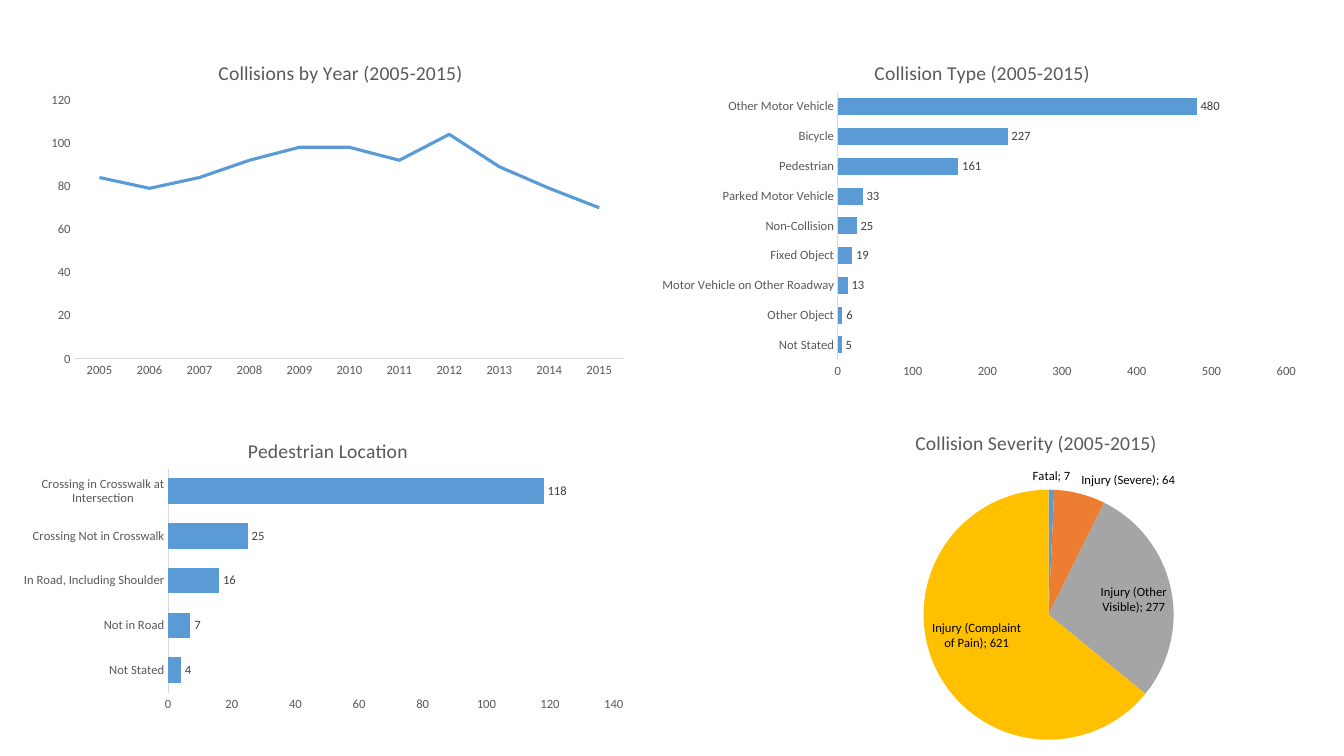
import pptx
import pptx.chart.data
import pptx.dml.color
import pptx.enum.chart
import pptx.oxml
import pptx.oxml.ns
import pptx.util

Inches = pptx.util.Inches
Kind = pptx.enum.chart.XL_CHART_TYPE
Spot = pptx.enum.chart.XL_LABEL_POSITION
HUES = {"blue": "5B9BD5", "orange": "ED7D31", "grey": "A5A5A5", "gold": "FFC000",
        "text": "595959", "label": "404040", "rule": "D9D9D9", "black": "000000"}


class Board:
    """Draws styled charts on one slide; boxes are left, top, width, height in inches."""

    def __init__(self, slide):
        self.slide = slide
        self.face = "Calibri"

    def hue(self, name):
        return pptx.dml.color.RGBColor.from_string(HUES[name])

    def font(self, font, size, name):
        font.size = pptx.util.Pt(size)
        font.name = self.face
        font.bold = False
        font.color.rgb = self.hue(name)

    def paint(self, fill, name):
        fill.solid()
        fill.fore_color.rgb = self.hue(name)

    def place(self, node, index, parts):
        for old in node.findall(pptx.oxml.ns.qn("c:layout")):
            node.remove(old)
        tags = "".join(f'<c:{tag} val="{val}"/>' for tag, val in parts)
        node.insert(index, pptx.oxml.parse_xml(
            f'<c:layout {pptx.oxml.ns.nsdecls("c")}><c:manualLayout>{tags}'
            '</c:manualLayout></c:layout>'))

    def chart(self, kind, box, title, spot, plot, rows):
        data = pptx.chart.data.CategoryChartData()
        data.categories = [name for name, _ in rows]
        data.add_series("Series 1", [val for _, val in rows])
        frame = self.slide.shapes.add_chart(kind, *map(Inches, box), data)
        chart = frame.chart
        self.font(chart.font, 10, "black")
        chart.has_legend = False
        chart.has_title = True
        head = chart.chart_title
        head.include_in_layout = False
        head.text_frame.text = title
        self.font(head.text_frame.paragraphs[0].font, 14, "text")

        left, top, wide, high = box
        x, y = spot
        edges = [("xMode", "edge"), ("yMode", "edge")]
        self.place(head.text_frame._txBody.getparent().getparent(), 1, edges + [
            ("x", round((x - left) / wide, 3)), ("y", round((y - top) / high, 3))])
        x, y, w, h = plot
        self.place(chart.element.chart.plotArea, 0, [("layoutTarget", "inner")] + edges + [
            ("x", round((x - left) / wide, 3)), ("y", round((y - top) / high, 3)),
            ("w", round(w / wide, 3)), ("h", round(h / high, 3))])
        chart.plots[0].vary_by_categories = kind == Kind.PIE
        return chart

    def axes(self, chart, top, step):
        for axis in (chart.category_axis, chart.value_axis):
            axis.has_major_gridlines = False
            axis.major_tick_mark = axis.minor_tick_mark = pptx.enum.chart.XL_TICK_MARK.NONE
            self.font(axis.tick_labels.font, 9, "text")
        line = chart.category_axis.format.line
        line.color.rgb = self.hue("rule")
        line.width = pptx.util.Pt(0.75)
        axis = chart.value_axis
        axis.format.line.fill.background()
        axis.minimum_scale, axis.maximum_scale, axis.major_unit = 0, top, step

    def labels(self, chart, name, spot):
        series = chart.plots[0].series[0]
        tags = series.data_labels
        tags.show_value = True
        tags.position = spot
        self.font(tags.font, 9, name)
        return tags

    def bars(self, top, step, **look):
        chart = self.chart(Kind.BAR_CLUSTERED, **look)
        self.axes(chart, top, step)
        chart.plots[0].gap_width = 75
        self.paint(chart.plots[0].series[0].format.fill, "blue")
        self.labels(chart, "label", Spot.OUTSIDE_END)

    def line(self, top, step, **look):
        chart = self.chart(Kind.LINE, **look)
        self.axes(chart, top, step)
        series = chart.plots[0].series[0]
        series.smooth = False
        series.format.line.color.rgb = self.hue("blue")
        series.format.line.width = pptx.util.Pt(2.25)
        series.marker.style = pptx.enum.chart.XL_MARKER_STYLE.NONE

    def pie(self, names, **look):
        chart = self.chart(Kind.PIE, **look)
        series = chart.plots[0].series[0]
        for index, name in enumerate(names):
            self.paint(series.points[index].format.fill, name)
        tags = self.labels(chart, "black", Spot.BEST_FIT)
        tags.show_category_name = True
        tags.number_format = "#,##0"
        tags.number_format_is_linked = False
        mark = pptx.oxml.parse_xml(
            f'<c:separator {pptx.oxml.ns.nsdecls("c")}>; </c:separator>')
        tags._element.find(pptx.oxml.ns.qn("c:showBubbleSize")).addnext(mark)


def main():
    deck = pptx.Presentation()
    deck.slide_width, deck.slide_height = Inches(13.33), Inches(7.5)
    board = Board(deck.slides.add_slide(deck.slide_layouts[6]))

    board.bars(
        600, 100, box=(6.44, 0.38, 6.54, 3.45), title="Collision Type (2005-2015)",
        spot=(8.64, 0.55), plot=(8.31, 0.91, 4.45, 2.66),
        rows=[("Not Stated", 5), ("Other Object", 6), ("Motor Vehicle on Other Roadway", 13),
              ("Fixed Object", 19), ("Non-Collision", 25), ("Parked Motor Vehicle", 33),
              ("Pedestrian", 161), ("Bicycle", 227), ("Other Motor Vehicle", 480)])
    board.bars(
        140, 20, box=(0.12, 4.12, 6.19, 3), title="Pedestrian Location",
        spot=(2.42, 4.3), plot=(1.67, 4.65, 4.42, 2.22),
        rows=[("Not Stated", 4), ("Not in Road", 7), ("In Road, Including Shoulder", 16),
              ("Crossing Not in Crosswalk", 25), ("Crossing in Crosswalk at Intersection", 118)])
    counts = [84, 79, 84, 92, 98, 98, 92, 104, 89, 79, 70]
    board.line(
        120, 20, box=(0.39, 0.38, 5.92, 3.45), title="Collisions by Year (2005-2015)",
        spot=(2.13, 0.55), plot=(0.74, 0.99, 5.45, 2.57),
        rows=[(str(year), count) for year, count in enumerate(counts, 2005)])
    board.pie(
        ["blue", "orange", "grey", "gold"], box=(7.32, 4.04, 5.84, 3.44),
        title="Collision Severity (2005-2015)", spot=(9.04, 4.22), plot=(9.16, 4.86, 2.48, 2.48),
        rows=[("Fatal", 7), ("Injury (Severe)", 64), ("Injury (Other Visible)", 277),
              ("Injury (Complaint of Pain)", 621)])
    deck.save("out.pptx")


if __name__ == "__main__":
    main()
